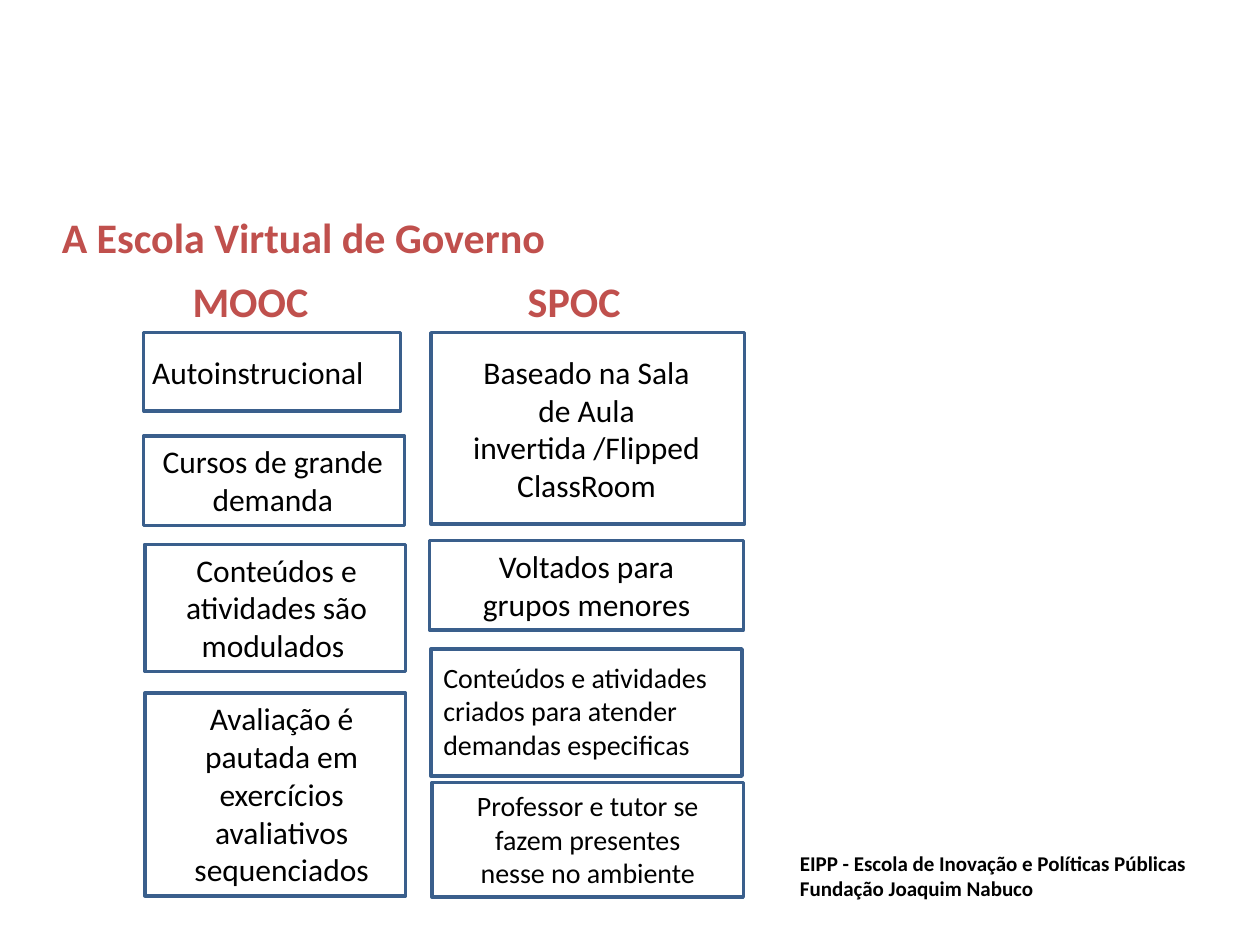
import dataclasses
import typing

import pptx
import pptx.dml.color
import pptx.enum.shapes
import pptx.enum.text
import pptx.util

Inches = pptx.util.Inches
Align = pptx.enum.text.PP_ALIGN
Frame = typing.Tuple[float, float, float, float]

COLORS = {"accent": "C0504D", "text": "000000", "line": "3A5F8C"}


@dataclasses.dataclass
class Label:
    text: str
    at: Frame
    size: int = 18
    color: str = "text"
    bold: bool = False
    align: Align = Align.LEFT


@dataclasses.dataclass
class Card:
    label: Label
    box: Frame


def topic(text: str, at: Frame, box: Frame, size: int = 18,
          align: Align = Align.CENTER) -> Card:
    return Card(Label(text, at, size, align=align), box)


TITLE = Label("A Escola Virtual de Governo", (0.39, 1.63, 8.05, 0.5),
              24, "accent", True)

LABELS = [
    Label("MOOC", (1.43, 2.14, 1.86, 0.5), 24, "accent", True),
    Label("SPOC", (4.09, 2.14, 1.8, 0.5), 24, "accent", True),
    Label("EIPP - Escola de Inovação e Políticas Públicas\v"
          "Fundação Joaquim Nabuco", (6.25, 6.7, 3.29, 0.5), 12, bold=True),
]

MOOC = [
    topic("Autoinstrucional", (1.11, 2.75, 2.09, 0.4),
          (1.14, 2.64, 2.04, 0.62), align=Align.LEFT),
    topic("Cursos de grande demanda", (1.12, 3.46, 2.09, 0.71),
          (1.14, 3.46, 2.07, 0.71)),
    topic("Conteúdos e atividades são modulados ", (1.15, 4.32, 2.09, 1.01),
          (1.15, 4.32, 2.07, 1.01)),
    topic("Avaliação é pautada em exercícios\navaliativos sequenciados",
          (1.19, 5.5, 2.09, 1.61), (1.15, 5.5, 2.07, 1.61)),
]

SPOC = [
    topic("Baseado na Sala de Aula invertida /Flipped ClassRoom",
          (3.61, 2.75, 2.09, 1.31), (3.42, 2.64, 2.49, 1.52)),
    topic("Voltados para grupos menores", (3.61, 4.29, 2.09, 0.71),
          (3.41, 4.29, 2.49, 0.71)),
    topic("Conteúdos e atividades criados para atender demandas especificas",
          (3.42, 5.19, 2.47, 0.91), (3.42, 5.15, 2.47, 1.01), 16, Align.LEFT),
    topic("Professor e tutor se fazem presentes nesse no ambiente",
          (3.62, 6.21, 2.09, 0.91), (3.43, 6.21, 2.47, 0.91), 16),
]


def paint(name: str) -> pptx.dml.color.RGBColor:
    return pptx.dml.color.RGBColor.from_string(COLORS[name])


def place(shape, at: Frame) -> None:
    shape.left, shape.top, shape.width, shape.height = map(Inches, at)


def write(shape, label: Label) -> None:
    """Fill a text box or placeholder with the label."""
    place(shape, label.at)
    frame = shape.text_frame
    frame.text = label.text
    frame.word_wrap = True
    frame.auto_size = pptx.enum.text.MSO_AUTO_SIZE.NONE
    frame.vertical_anchor = pptx.enum.text.MSO_ANCHOR.TOP
    for para in frame.paragraphs:
        para.alignment = label.align
        font = para.font
        font.name = "Calibri"
        font.size = pptx.util.Pt(label.size)
        font.bold = label.bold
        font.color.rgb = paint(label.color)


def add_label(slide, label: Label) -> None:
    write(slide.shapes.add_textbox(*map(Inches, label.at)), label)


def add_card(slide, card: Card) -> None:
    """Draw the outline and its text, which has a frame of its own."""
    rect = slide.shapes.add_shape(
        pptx.enum.shapes.MSO_SHAPE.RECTANGLE, *map(Inches, card.box))
    rect.shadow.inherit = False
    rect.fill.background()
    rect.line.color.rgb = paint("line")
    rect.line.width = pptx.util.Pt(2)
    add_label(slide, card.label)


def main() -> None:
    deck = pptx.Presentation()
    deck.slide_width, deck.slide_height = Inches(10), Inches(7.5)
    slide = deck.slides.add_slide(deck.slide_layouts.get_by_name("Title Only"))
    write(slide.shapes.title, TITLE)
    for label in LABELS:
        add_label(slide, label)
    for card in MOOC + SPOC:
        add_card(slide, card)
    deck.save("out.pptx")


if __name__ == "__main__":
    main()
